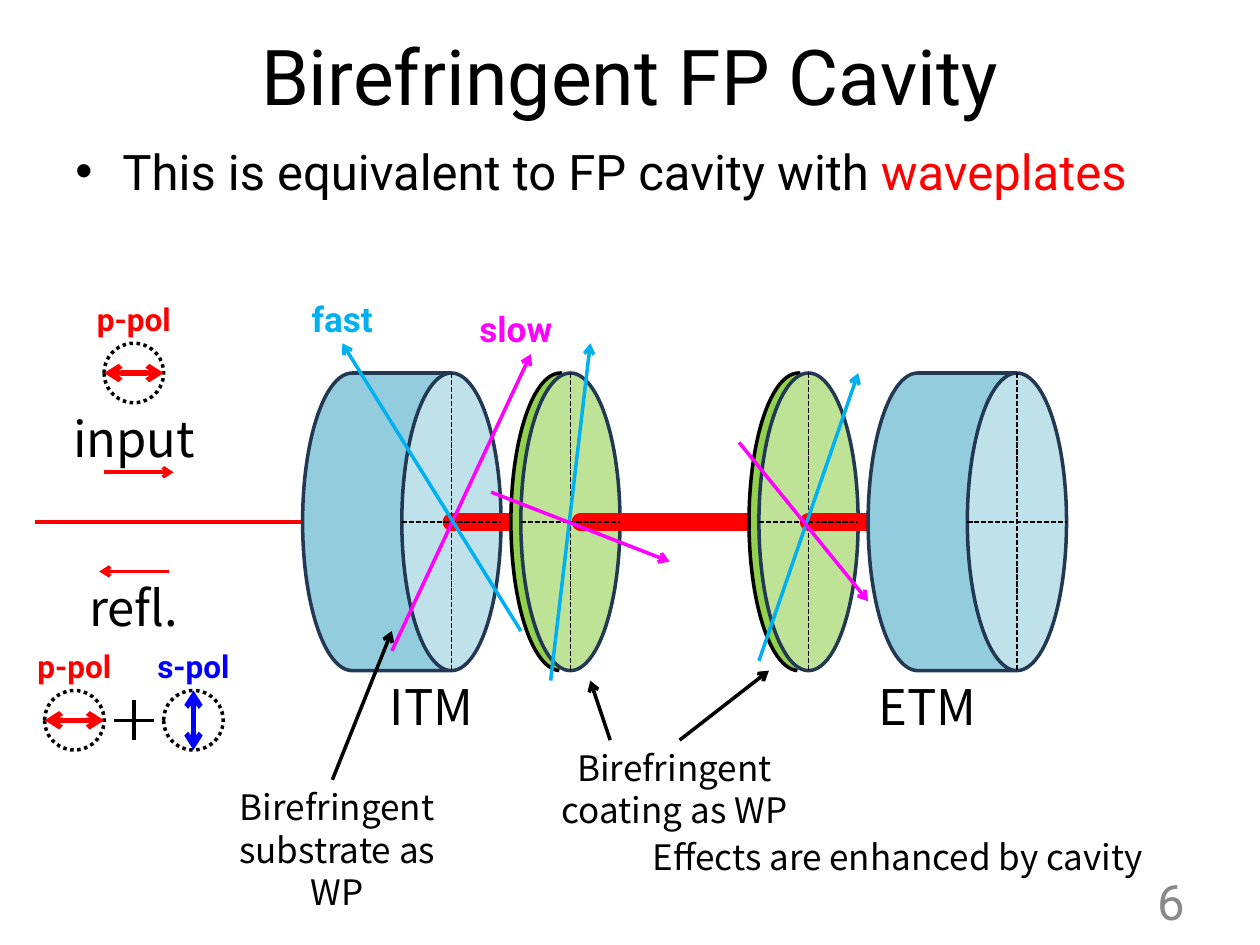
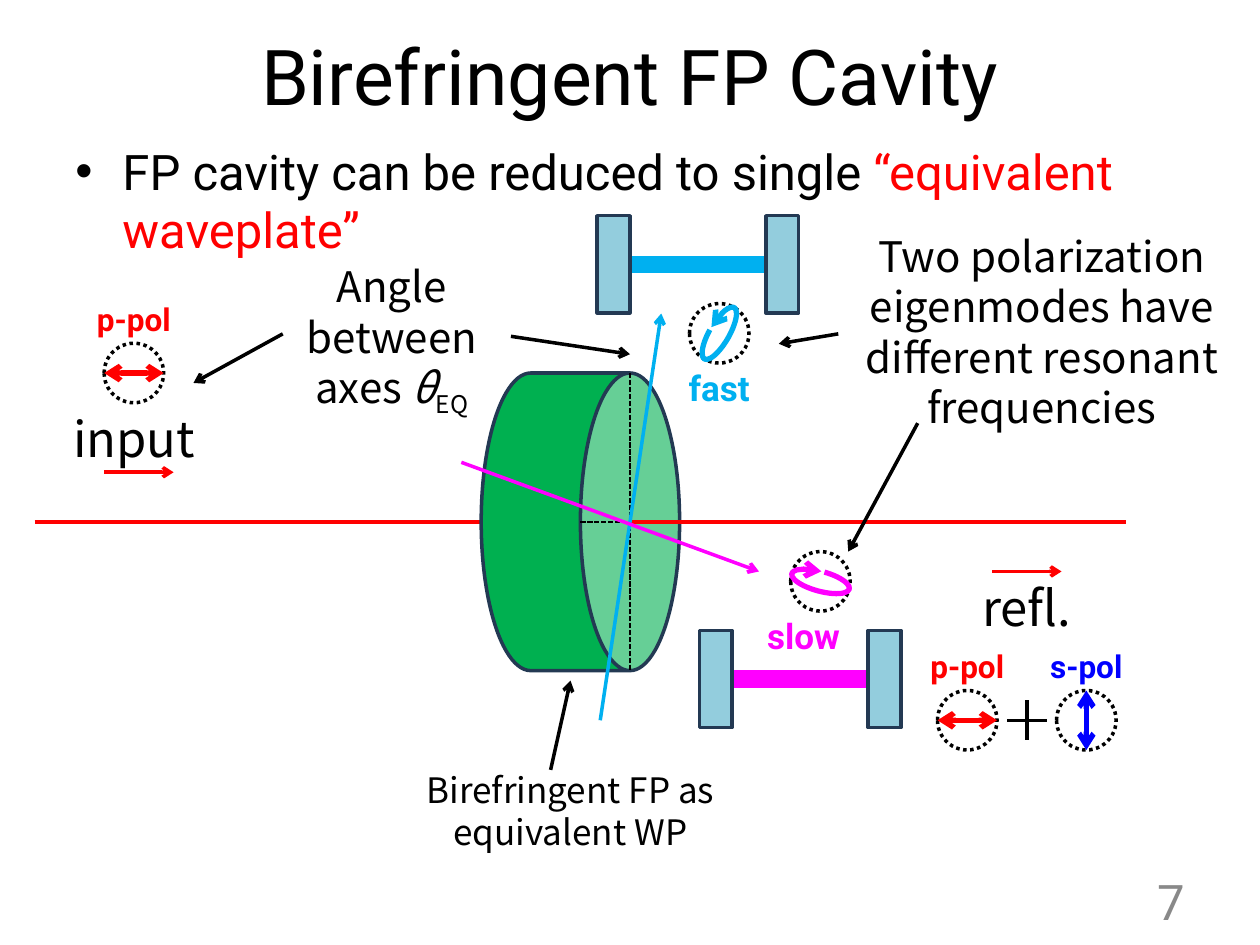
from lxml import etree
from pptx import Presentation
from pptx import util as u
from pptx.dml.color import RGBColor
from pptx.enum import dml, shapes, text
from pptx.oxml.ns import qn

HEADING_FONT, LABEL_FONT = "Roboto", "Noto Sans CJK JP"
BLACK, RED, BLUE, GREY = "000000", "FF0000", "0000FF", "898989"
FAST, SLOW = "00B0F0", "FF00FF"
MIRROR, OUTLINE, EQUIVALENT = "93CDDD", "233953", "00B050"
COATING_EDGE, COATING_FACE = "92D050", "BEE396"
DOTTED, DASHED = dml.MSO_LINE.ROUND_DOT, dml.MSO_LINE.SQUARE_DOT
KIND = shapes.MSO_SHAPE
ALIGN, ANCHOR = text.PP_ALIGN, text.MSO_ANCHOR

AXIS = 10.52  # height of the optical axis
OPTIC_HEIGHT = 6
FACE_WIDTH = 2


def color(value):
    return RGBColor.from_string(value)


class Diagram:
    """Holds the presentation, its style and the slide being drawn; lengths are in cm."""

    def __init__(self):
        self.presentation = Presentation()
        self.presentation.slide_width = u.Cm(25.4)
        self.presentation.slide_height = u.Cm(19.05)
        self.slide = None

    def new_slide(self, title, statement, number):
        layout = self.presentation.slide_layouts[6]
        self.slide = self.presentation.slides.add_slide(layout)
        body = self.text(statement, 1.27, 2.72, 24.13, 3.6, font=HEADING_FONT,
                         align=ALIGN.LEFT, before=5.6)
        properties = body.text_frame.paragraphs[0]._p.get_or_add_pPr()
        properties.set("marL", str(u.Cm(0.95)))
        properties.set("indent", str(u.Cm(-0.95)))
        etree.SubElement(properties, qn("a:buFont")).set("typeface", "Arial")
        etree.SubElement(properties, qn("a:buChar")).set("char", "•")
        self.text(title, 0, -0.08, 25.4, 3.18, font=HEADING_FONT, size=44,
                  anchor=ANCHOR.MIDDLE)
        self.text(str(number), 18.2, 17.65, 5.93, 1.01, font=HEADING_FONT,
                  fill=GREY, align=ALIGN.RIGHT, anchor=ANCHOR.MIDDLE)

    def text(self, content, left, top, width, height, *, font=LABEL_FONT, size=28,
             fill=BLACK, bold=False, align=ALIGN.CENTER, anchor=ANCHOR.TOP,
             before=0, inset=True):
        """Content is a string or a list of (string, run format) pairs."""
        box = self.slide.shapes.add_textbox(
            u.Cm(left), u.Cm(top), u.Cm(width), u.Cm(height))
        frame = box.text_frame
        frame.word_wrap = True
        frame.vertical_anchor = anchor
        if not inset:
            frame.margin_left = frame.margin_right = 0
            frame.margin_top = frame.margin_bottom = 0
        paragraph = frame.paragraphs[0]
        paragraph.alignment = align
        paragraph.space_before = u.Pt(before)
        for string, style in [(content, {})] if isinstance(content, str) else content:
            run = paragraph.add_run()
            run.text = string
            run.font.name, run.font.size, run.font.bold = font, u.Pt(size), bold
            run.font.italic = style.get("italic", False)
            run.font.color.rgb = color(style.get("fill", fill))
            if "baseline" in style:
                run._r.get_or_add_rPr().set("baseline", str(style["baseline"]))
        return box

    def tag(self, content, left, top, width, fill, size=20):
        self.text(content, left, top, width, 1, font=HEADING_FONT, size=size,
                  fill=fill, bold=True, anchor=ANCHOR.MIDDLE, inset=False)

    def stroke(self, line, fill, width, dash=None, ends=(), cap=None):
        """Ends names the arrowheads: headEnd at the start, tailEnd at the finish."""
        line.color.rgb = color(fill)
        line.width = u.Pt(width)
        if dash is not None:
            line.dash_style = dash
        element = line._get_or_add_ln()
        if cap:
            element.set("cap", cap)
        for end in ends:
            etree.SubElement(element, qn("a:" + end)).set("type", "arrow")

    def line(self, start, finish, fill=BLACK, width=2, **style):
        connector = self.slide.shapes.add_connector(
            shapes.MSO_CONNECTOR.STRAIGHT, *map(u.Cm, start + finish))
        self.stroke(connector.line, fill, width, **style)
        etree.SubElement(connector._element.spPr, qn("a:effectLst"))

    def arrow(self, start, finish, fill=BLACK):
        self.line(start, finish, fill, ends=["tailEnd"])

    def beam(self, start, finish, height=AXIS, fill=RED):
        self.line((start, height), (finish, height), fill, 10, cap="rnd")

    def shape(self, kind, center, width, height, fill=None, outline=OUTLINE,
              weight=2, rotation=0, adjust=(), **style):
        x, y = center
        shape = self.slide.shapes.add_shape(
            kind, u.Cm(x - width / 2), u.Cm(y - height / 2), u.Cm(width), u.Cm(height))
        shape.shadow.inherit = False
        shape.rotation = rotation
        for index, value in enumerate(adjust):
            shape.adjustments[index] = value
        if fill:
            shape.fill.solid()
            shape.fill.fore_color.rgb = color(fill)
        else:
            shape.fill.background()
        self.stroke(shape.line, outline, weight, **style)

    def optic(self, x, fill=MIRROR):
        """Thick cylinder whose front face is centred 1 cm right of x."""
        self.shape(KIND.CAN, (x, AXIS), OPTIC_HEIGHT, 4, fill, rotation=90, adjust=[0.5])

    def coating(self, x):
        self.shape(KIND.ARC, (x - 0.2, AXIS), FACE_WIDTH, OPTIC_HEIGHT, COATING_EDGE,
                   BLACK, adjust=[54.272, 162.391])
        self.shape(KIND.OVAL, (x, AXIS), FACE_WIDTH, OPTIC_HEIGHT, COATING_FACE)

    def crosshair(self, x):
        half_width, half_height = FACE_WIDTH / 2, OPTIC_HEIGHT / 2
        for dx, dy in [(half_width, 0), (0, half_height)]:
            self.line((x - dx, AXIS - dy), (x + dx, AXIS + dy), width=1, dash=DASHED)

    def dotted_circle(self, center):
        self.shape(KIND.OVAL, center, 1.2, 1.2, outline=BLACK, dash=DOTTED)

    def polarization(self, name, x, y, fill, dx=0.0, dy=0.0):
        """Dotted circle with a double arrow reaching dx, dy from its centre."""
        self.dotted_circle((x, y))
        self.tag(name, x - 1, y - 1.6, 2, fill, size=18)
        self.line((x + dx, y + dy), (x - dx, y - dy), fill, 3,
                  ends=["headEnd", "tailEnd"])

    def input_light(self):
        self.arrow((2.1, 9.52), (3.5, 9.52), RED)
        self.text("input", 0.7, 8.12, 4, 1.45)
        self.polarization("p-pol", 2.7, 7.52, RED, dx=0.6)

    def reflected_light(self, x, direction):
        self.arrow((x - 0.7 * direction, 11.52), (x + 0.7 * direction, 11.52), RED)
        self.text("refl.", x - 2, 11.52, 4, 1.45)
        y = 14.52
        self.polarization("p-pol", x - 1.2, y, RED, dx=0.6)
        self.polarization("s-pol", x + 1.2, y, BLUE, dy=0.6)
        self.line((x - 0.4, y), (x + 0.4, y))
        self.line((x, y - 0.4), (x, y + 0.4))

    def eigenmode(self, center, fill, rotation, end):
        self.dotted_circle(center)
        self.shape(KIND.ARC, center, 0.4, 1.2, outline=fill, weight=3,
                   rotation=rotation, adjust=[112.79, 101.888], ends=[end])

    def resonator(self, left, y, fill):
        width, spacing = 0.66, 3.4
        self.beam(left + width, left + spacing, y, fill)
        for x in (left, left + spacing):
            self.shape(KIND.RECTANGLE, (x + width / 2, y), width, 1.96, MIRROR)


def draw_waveplate_cavity(diagram):
    diagram.new_slide("Birefringent FP Cavity", [
        ("This is equivalent to FP cavity with ", {}),
        ("waveplates", {"fill": RED})], 6)
    diagram.line((0.7, AXIS), (6.7, AXIS), RED)
    diagram.optic(8.1)
    diagram.beam(9.1, 11.3)
    diagram.text("ITM", 6.7, 13.52, 4, 1.45)
    diagram.text("ETM", 16.7, 13.52, 4, 1.45)
    diagram.input_light()
    diagram.reflected_light(2.7, -1)
    diagram.coating(11.5)
    diagram.beam(11.7, 15.9)
    diagram.coating(16.3)
    diagram.beam(16.3, 18.7)
    diagram.optic(19.5)
    for x in (9.1, 11.5, 16.3, 20.5):
        diagram.crosshair(x)

    diagram.tag("fast", 5.5, 5.92, 2.8, FAST)
    diagram.tag("slow", 9.3, 6.12, 2.2, SLOW)
    for start, finish, fill in [
        ((7.9, 13.12), (10.7, 7.14), SLOW),
        ((10.5, 12.72), (6.9, 6.92), FAST),
        ((11.1, 13.72), (11.9, 6.92), FAST),
        ((9.9, 9.92), (13.5, 11.32), SLOW),
        ((15.3, 13.32), (17.3, 7.52), FAST),
        ((14.9, 8.92), (17.5, 12.12), SLOW),
        ((6.7, 15.72), (7.9, 12.72), BLACK),
        ((12.3, 14.92), (11.9, 13.72), BLACK),
        ((13.7, 14.92), (15.5, 13.52), BLACK),
    ]:
        diagram.arrow(start, finish, fill)
    diagram.text("Birefringent substrate as WP", 4.5, 15.72, 4.6, 2.82, size=20)
    diagram.text("Birefringent coating as WP", 10.9, 14.92, 5.4, 1.96, size=20)
    diagram.text("Effects are enhanced by cavity", 12.1, 16.72, 12, 1.12, size=20)


def draw_equivalent_waveplate(diagram):
    diagram.new_slide("Birefringent FP Cavity", [
        ("FP cavity can be reduced to single ", {}),
        ("“equivalent waveplate”", {"fill": RED})], 7)
    diagram.line((0.7, AXIS), (10.7, AXIS), RED)
    diagram.input_light()
    diagram.reflected_light(20.7, 1)
    diagram.optic(11.7, EQUIVALENT)
    diagram.crosshair(12.7)
    diagram.line((12.7, AXIS), (22.7, AXIS), RED)

    diagram.tag("fast", 13.1, 7.32, 2.8, FAST)
    diagram.tag("slow", 15.1, 12.32, 2.2, SLOW)
    diagram.eigenmode((14.5, 6.72), FAST, 30, "headEnd")
    diagram.eigenmode((16.54, 11.72), SLOW, 105, "tailEnd")
    for start, finish, fill in [
        ((12.1, 14.52), (13.33, 6.32), FAST),
        ((9.3, 9.32), (15.3, 11.52), SLOW),
        ((11.1, 15.52), (11.5, 13.72), BLACK),
        ((18.5, 8.53), (17.1, 11.12), BLACK),
        ((16.9, 6.73), (15.7, 6.93), BLACK),
        ((5.7, 6.73), (3.9, 7.72), BLACK),
        ((10.3, 6.78), (12.7, 7.14), BLACK),
    ]:
        diagram.arrow(start, finish, fill)
    diagram.text("Birefringent FP as equivalent WP", 8.1, 15.37, 6.8, 1.96, size=20)
    diagram.text("Two polarization eigenmodes have different resonant frequencies",
                 16.6, 4.52, 8.8, 4.37, size=24)
    diagram.text([("Angle between axes ", {}), ("θ", {"italic": True}),
                  ("EQ", {"baseline": -25000})], 5.5, 5.13, 4.8, 3.33, size=24)
    diagram.resonator(14.1, 13.69, SLOW)
    diagram.resonator(12.04, 5.33, FAST)


def main():
    diagram = Diagram()
    draw_waveplate_cavity(diagram)
    draw_equivalent_waveplate(diagram)
    diagram.presentation.save("out.pptx")


if __name__ == "__main__":
    main()
